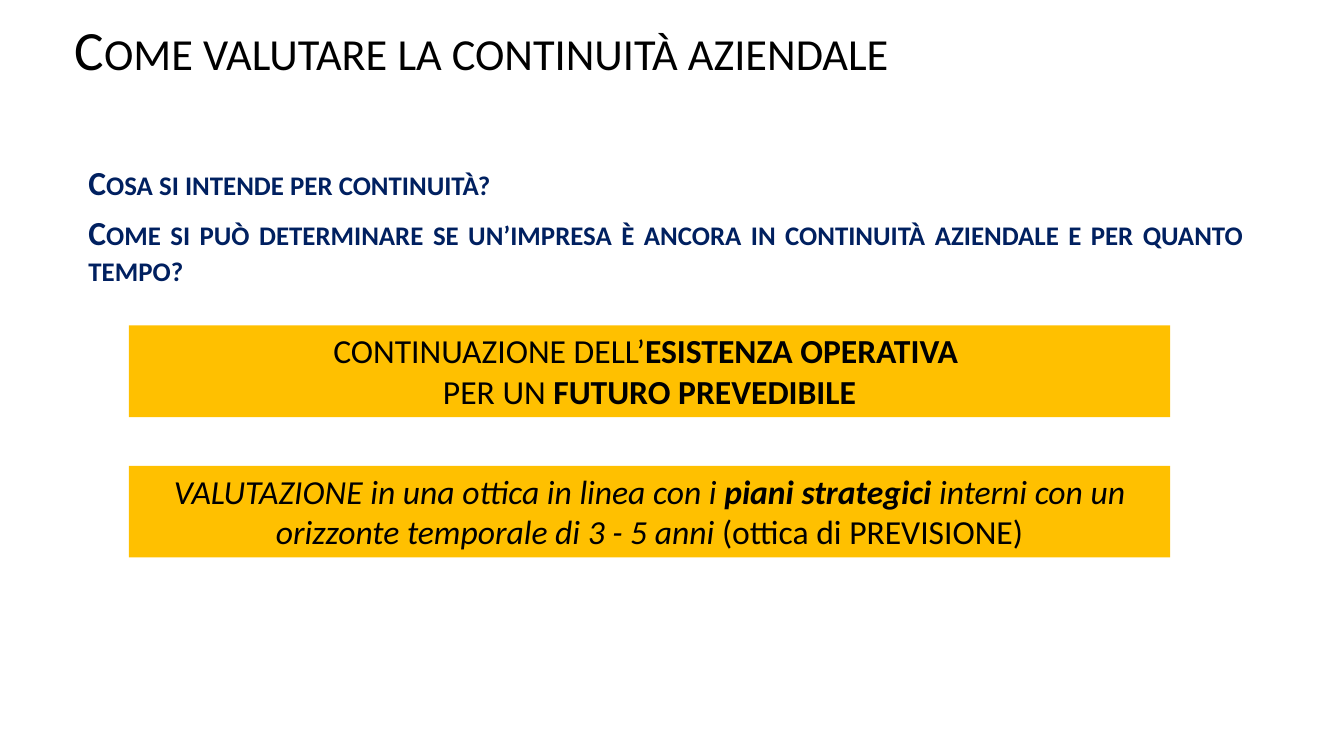
"""Build the slide on how to assess whether a business is a going concern."""
from dataclasses import dataclass

from pptx import Presentation
from pptx.dml.color import RGBColor
from pptx.enum.shapes import MSO_SHAPE as Preset
from pptx.enum.text import MSO_ANCHOR as Anchor, PP_ALIGN as Align
from pptx.shapes.autoshape import Shape
from pptx.slide import Slide
from pptx.util import Cm, Pt

FONT = "Calibri"
BLACK, NAVY, AMBER = "000000", "002060", "FFC000"


@dataclass(frozen=True)
class TextRun:
    text: str
    bold: bool = False
    italic: bool = False


@dataclass(frozen=True)
class TextStyle:
    size: float = 24
    color: str = BLACK
    align: Align = Align.CENTER
    anchor: Anchor = Anchor.TOP
    line_spacing: float = 1.0
    space_before: float = 0
    small_caps: bool = False


@dataclass(frozen=True)
class TextBlock:
    left: float
    top: float
    width: float
    height: float
    paragraphs: list[list[TextRun]]
    style: TextStyle
    fill: str = ""


def rgb(color: str) -> RGBColor:
    return RGBColor.from_string(color)


def write_text(shape: Shape, paragraphs: list[list[TextRun]], style: TextStyle) -> None:
    frame = shape.text_frame
    frame.word_wrap = True
    frame.vertical_anchor = style.anchor
    for index, text_runs in enumerate(paragraphs):
        paragraph = frame.add_paragraph() if index else frame.paragraphs[0]
        paragraph.alignment = style.align
        paragraph.line_spacing = style.line_spacing
        paragraph.space_before = Pt(style.space_before)
        for text_run in text_runs:
            run = paragraph.add_run()
            run.text = text_run.text
            font = run.font
            font.name, font.size = FONT, Pt(style.size)
            font.bold, font.italic = text_run.bold, text_run.italic
            font.color.rgb = rgb(style.color)
            if style.small_caps:
                run._r.get_or_add_rPr().set("cap", "small")


def draw_block(slide: Slide, block: TextBlock) -> None:
    bounds = [Cm(value) for value in (block.left, block.top, block.width, block.height)]
    if block.fill:
        shape = slide.shapes.add_shape(Preset.RECTANGLE, *bounds)
        shape.shadow.inherit = False
        shape.fill.solid()
        shape.fill.fore_color.rgb = rgb(block.fill)
        shape.line.fill.background()
    else:
        shape = slide.shapes.add_textbox(*bounds)
    write_text(shape, block.paragraphs, block.style)


TITLE_STYLE = TextStyle(size=39.6, align=Align.LEFT, anchor=Anchor.MIDDLE,
                        line_spacing=0.9, small_caps=True)
QUESTION_STYLE = TextStyle(color=NAVY, align=Align.JUSTIFY, line_spacing=0.9,
                           space_before=10, small_caps=True)

TITLE = [[TextRun("Come valutare la continuità aziendale")]]
QUESTIONS = [
    [TextRun("Cosa si intende per continuità?", bold=True)],
    [TextRun("Come si può determinare se un’impresa è ancora in continuità "
             "aziendale e per quanto tempo? ", bold=True)],
]
ANSWERS = [
    [
        [TextRun("CONTINUAZIONE DELL’"), TextRun("ESISTENZA OPERATIVA ", bold=True)],
        [TextRun("PER UN "), TextRun("FUTURO PREVEDIBILE", bold=True)],
    ],
    [[
        TextRun("VALUTAZIONE in una ottica in linea con i ", italic=True),
        TextRun("piani strategici ", bold=True, italic=True),
        TextRun("interni con un orizzonte temporale di 3 - 5 anni ", italic=True),
        TextRun("(ottica di PREVISIONE)"),
    ]],
]
ANSWER_TOP, ANSWER_STEP = 8.2, 3.54


def main() -> None:
    presentation = Presentation()
    presentation.slide_width, presentation.slide_height = Cm(33.87), Cm(19.05)
    slide = presentation.slides.add_slide(presentation.slide_layouts[6])
    blocks = [
        TextBlock(1.63, 0.64, 30.99, 1.37, TITLE, TITLE_STYLE),
        TextBlock(1.98, 4.06, 29.59, 3.38, QUESTIONS, QUESTION_STYLE),
    ]
    blocks += [
        TextBlock(3.25, ANSWER_TOP + index * ANSWER_STEP, 26.24, 2.31,
                  answer, TextStyle(), AMBER)
        for index, answer in enumerate(ANSWERS)
    ]
    for block in blocks:
        draw_block(slide, block)
    presentation.save("out.pptx")


if __name__ == "__main__":
    main()
